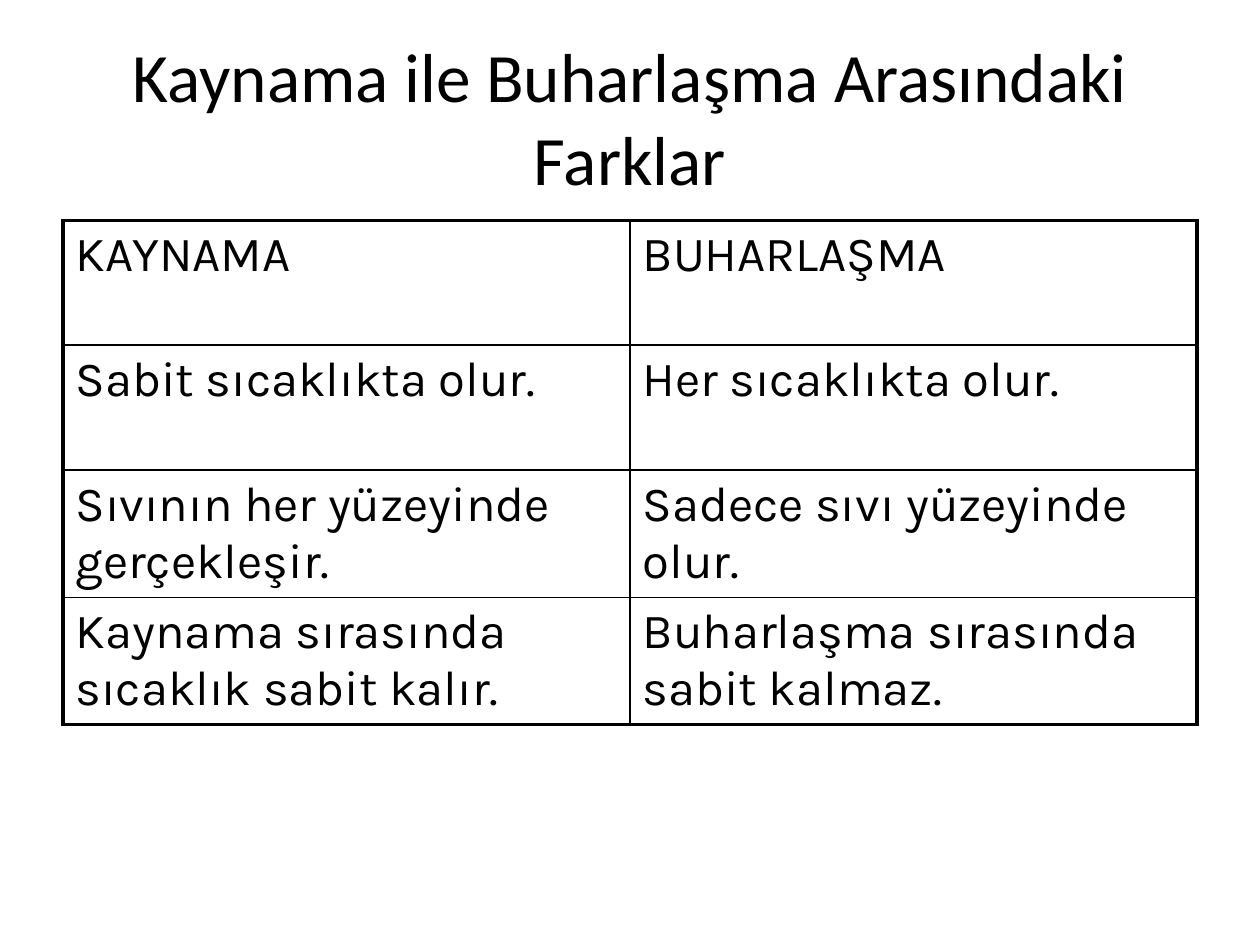
from dataclasses import dataclass

from lxml import etree
from pptx import Presentation
from pptx import util as u
from pptx.dml.color import RGBColor
from pptx.enum import text
from pptx.oxml import ns

SCALE = 9144  # EMU per px, 100 px to the inch


def px(n):
    return u.Emu(n * SCALE)


@dataclass
class Theme:
    ink: str = "000000"
    head: str = "Calibri"
    body: str = "Karla"
    title: float = 39.6
    cell: float = 28
    thin: float = 1
    thick: float = 2.25


def write(frame, words, font, size, color, align=text.PP_ALIGN.LEFT):
    frame.word_wrap = True
    para = frame.paragraphs[0]
    para.alignment = align
    run = para.add_run()
    run.text = words
    run.font.name = font
    run.font.size = u.Pt(size)
    run.font.bold = False
    run.font.color.rgb = RGBColor.from_string(color)


def edge(cell, side, width, color):
    """Draw one border of a cell; side is L, R, T or B."""
    props = cell._tc.get_or_add_tcPr()
    line = etree.SubElement(props, ns.qn(f"a:ln{side}"), w=str(u.Pt(width)))
    fill = etree.SubElement(line, ns.qn("a:solidFill"))
    etree.SubElement(fill, ns.qn("a:srgbClr"), val=color)


class Deck:
    def __init__(self, theme):
        self.theme = theme
        self.show = Presentation()
        self.show.slide_width, self.show.slide_height = px(1000), px(750)
        self.slide = self.show.slides.add_slide(self.show.slide_layouts[5])

    def title(self, words, x, y, w, h):
        box = self.slide.shapes.title
        box.left, box.top, box.width, box.height = map(px, (x, y, w, h))
        frame = box.text_frame
        frame.auto_size = text.MSO_AUTO_SIZE.NONE
        frame.vertical_anchor = text.MSO_ANCHOR.MIDDLE
        write(frame, words, self.theme.head, self.theme.title,
              self.theme.ink, align=text.PP_ALIGN.CENTER)

    def table(self, rows, x, y, w, high):
        """Add a grid with a thick frame and thin inner lines."""
        look = self.theme
        down, wide = len(rows), len(rows[0])
        grid = self.slide.shapes.add_table(
            down, wide, px(x), px(y), px(w), px(high * down)).table
        grid.first_row = grid.horz_banding = False
        for i, row in enumerate(rows):
            for j, words in enumerate(row):
                cell = grid.cell(i, j)
                outer = {"L": j == 0, "R": j == wide - 1,
                         "T": i == 0, "B": i == down - 1}
                for side, rim in outer.items():
                    edge(cell, side, look.thick if rim else look.thin, look.ink)
                cell.fill.background()
                write(cell.text_frame, words, look.body, look.cell, look.ink)

    def save(self):
        self.show.save("out.pptx")


def main():
    deck = Deck(Theme())
    deck.title("Kaynama ile Buharlaşma Arasındaki Farklar", 50, 30, 900, 125)
    deck.table([
        ("KAYNAMA", "BUHARLAŞMA"),
        ("Sabit sıcaklıkta olur.", "Her sıcaklıkta olur."),
        ("Sıvının her yüzeyinde gerçekleşir.", "Sadece sıvı yüzeyinde olur."),
        ("Kaynama sırasında sıcaklık sabit kalır.",
         "Buharlaşma sırasında sabit kalmaz."),
    ], 50, 175, 900, 99)
    deck.save()


if __name__ == "__main__":
    main()
